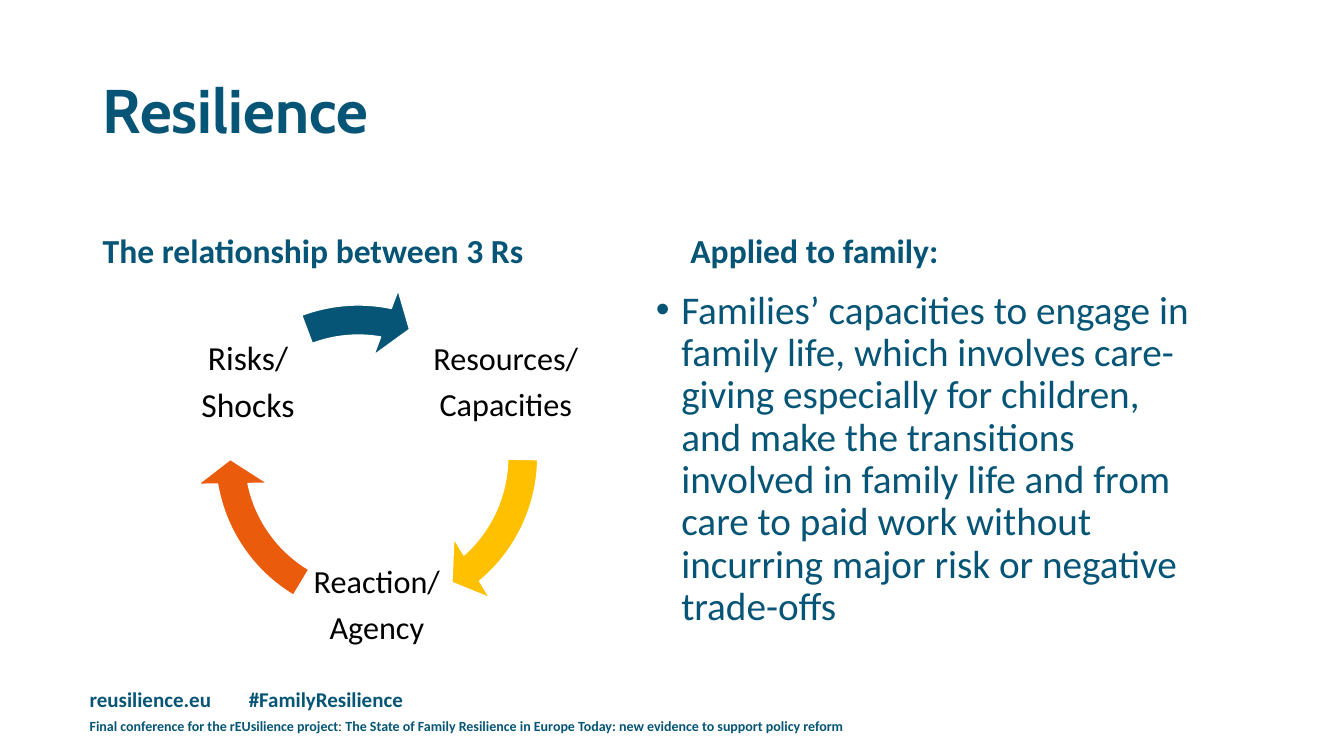
import dataclasses

import lxml.etree
import pptx
import pptx.dml.color
import pptx.enum.shapes
import pptx.enum.text
import pptx.oxml.ns
import pptx.util

Anchor = pptx.enum.text.MSO_ANCHOR
Align = pptx.enum.text.PP_ALIGN
Cm = pptx.util.Cm
Pt = pptx.util.Pt


@dataclasses.dataclass(frozen=True)
class Theme:
    blue: str = "065576"
    orange: str = "EA5B0C"
    yellow: str = "FFC000"
    black: str = "000000"
    white: str = "FFFFFF"
    title_font: str = "Cabin"
    body_font: str = "Calibri"
    separator_font: str = "Times New Roman"
    title_size: int = 44
    body_size: int = 28
    heading_size: int = 24
    label_size: int = 23
    web_size: int = 15
    footer_size: int = 10


class SlideBuilder:
    def __init__(self, slide, theme):
        self.slide = slide
        self.theme = theme

    def color(self, value):
        return pptx.dml.color.RGBColor.from_string(value)

    def box(self, left, top, width, height, anchor=Anchor.TOP, inset=None):
        shape = self.slide.shapes.add_textbox(Cm(left), Cm(top), Cm(width), Cm(height))
        frame = shape.text_frame
        frame.word_wrap = True
        frame.vertical_anchor = anchor
        if inset is not None:
            frame.margin_left = frame.margin_right = Cm(inset)
            frame.margin_top = frame.margin_bottom = Cm(inset)
        return frame

    def run(self, paragraph, text, size, color=None, font=None, bold=False):
        run = paragraph.add_run()
        run.text = text
        run.font.size = Pt(size)
        run.font.name = font or self.theme.body_font
        run.font.bold = bold
        run.font.color.rgb = self.color(color or self.theme.blue)

    def heading(self, text, left, top, width, height, size, font=None, anchor=Anchor.BOTTOM):
        paragraph = self.box(left, top, width, height, anchor).paragraphs[0]
        paragraph.line_spacing = 0.9
        self.run(paragraph, text, size, font=font, bold=True)

    def bullet(self, text, left, top, width, height):
        paragraph = self.box(left, top, width, height).paragraphs[0]
        paragraph.line_spacing = 0.9
        properties = paragraph._p.get_or_add_pPr()
        properties.set("marL", str(Cm(0.64)))
        properties.set("indent", str(Cm(-0.64)))
        font = lxml.etree.SubElement(properties, pptx.oxml.ns.qn("a:buFont"))
        font.set("typeface", "Arial")
        mark = lxml.etree.SubElement(properties, pptx.oxml.ns.qn("a:buChar"))
        mark.set("char", "•")
        self.run(paragraph, text, self.theme.body_size)

    def cycle_label(self, lines, left, top, size):
        frame = self.box(left, top, 3.86, 3.86, Anchor.MIDDLE, inset=0.08)
        for index, line in enumerate(lines):
            paragraph = frame.add_paragraph() if index else frame.paragraphs[0]
            paragraph.alignment = Align.CENTER
            paragraph.line_spacing = 0.9
            paragraph.space_after = Pt(round(0.35 * size))
            self.run(paragraph, line, size, self.theme.black)

    def cycle_arrow(self, left, top, tail_degrees, head_degrees, color):
        shape = self.slide.shapes.add_shape(
            pptx.enum.shapes.MSO_SHAPE.CIRCULAR_ARROW, Cm(left), Cm(top), Cm(9.12), Cm(9.12)
        )
        shape.shadow.inherit = False
        shape.fill.solid()
        shape.fill.fore_color.rgb = self.color(color)
        shape.line.color.rgb = self.color(self.theme.white)
        shape.line.width = Pt(1)
        values = (0.083, 5.766, head_degrees * 0.6, tail_degrees * 0.6, 0.096)
        for index, value in enumerate(values):
            shape.adjustments[index] = value

    def web_line(self, address, hashtag):
        paragraph = self.box(2.01, 17.17, 10.67, 1.57).paragraphs[0]
        properties = paragraph._p.get_or_add_pPr()
        tabs = lxml.etree.SubElement(properties, pptx.oxml.ns.qn("a:tabLst"))
        tab = lxml.etree.SubElement(tabs, pptx.oxml.ns.qn("a:tab"))
        tab.set("pos", str(Cm(4.01)))
        tab.set("algn", "l")
        self.run(paragraph, f"{address}\t{hashtag}", self.theme.web_size, bold=True)

    def footer(self, event, topic):
        theme = self.theme
        paragraph = self.box(2.01, 17.96, 20.07, 0.69).paragraphs[0]
        self.run(paragraph, event, theme.footer_size, bold=True)
        self.run(paragraph, ": ", theme.footer_size, theme.black, theme.separator_font)
        self.run(paragraph, topic, theme.footer_size, bold=True)


def main():
    theme = Theme()
    presentation = pptx.Presentation()
    presentation.slide_width = Cm(33.87)
    presentation.slide_height = Cm(19.05)
    slide = presentation.slides.add_slide(presentation.slide_layouts[6])
    builder = SlideBuilder(slide, theme)

    builder.web_line("reusilience.eu", "#FamilyResilience")
    builder.footer(
        "Final conference for the rEUsilience project",
        "The State of Family Resilience in Europe Today: new evidence to support policy reform",
    )
    builder.heading(
        "Resilience", 2.34, 1.02, 29.21, 3.68, theme.title_size, theme.title_font, Anchor.MIDDLE
    )
    builder.heading("The relationship between 3 Rs", 2.34, 4.67, 14.33, 2.29, theme.heading_size)
    builder.heading("Applied to family:", 17.15, 4.67, 14.4, 2.29, theme.heading_size)
    builder.bullet(
        "Families’ capacities to engage in family life, which involves care-giving "
        "especially for children, and make the transitions involved in family life and "
        "from care to paid work without incurring major risk or negative trade-offs",
        16.28, 7.19, 14.4, 10.24,
    )

    for lines, left, top, size in (
        (("Resources/", "Capacities"), 10.82, 7.72, theme.label_size),
        (("Reaction/", "Agency"), 7.57, 13.34, theme.label_size),
        (("Risks/", "Shocks"), 4.32, 7.72, theme.heading_size),
    ):
        builder.cycle_label(lines, left, top, size)

    for left, top, tail, head, color in (
        (4.93, 6.96, 0.89, 49.36, theme.yellow),
        (4.93, 6.96, 121.03, 169.5, theme.orange),
        (4.47, 7.19, 249.48, 280.91, theme.blue),
    ):
        builder.cycle_arrow(left, top, tail, head, color)

    presentation.save("out.pptx")


if __name__ == "__main__":
    main()
